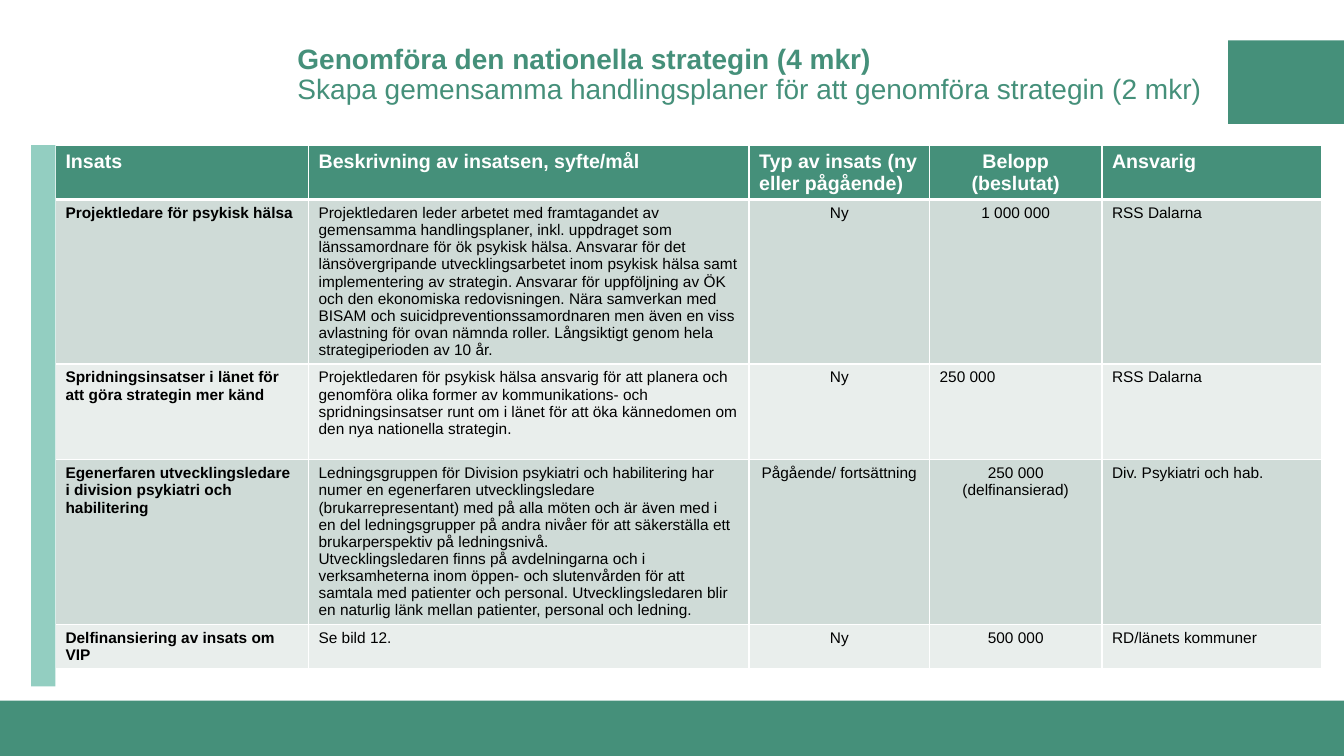
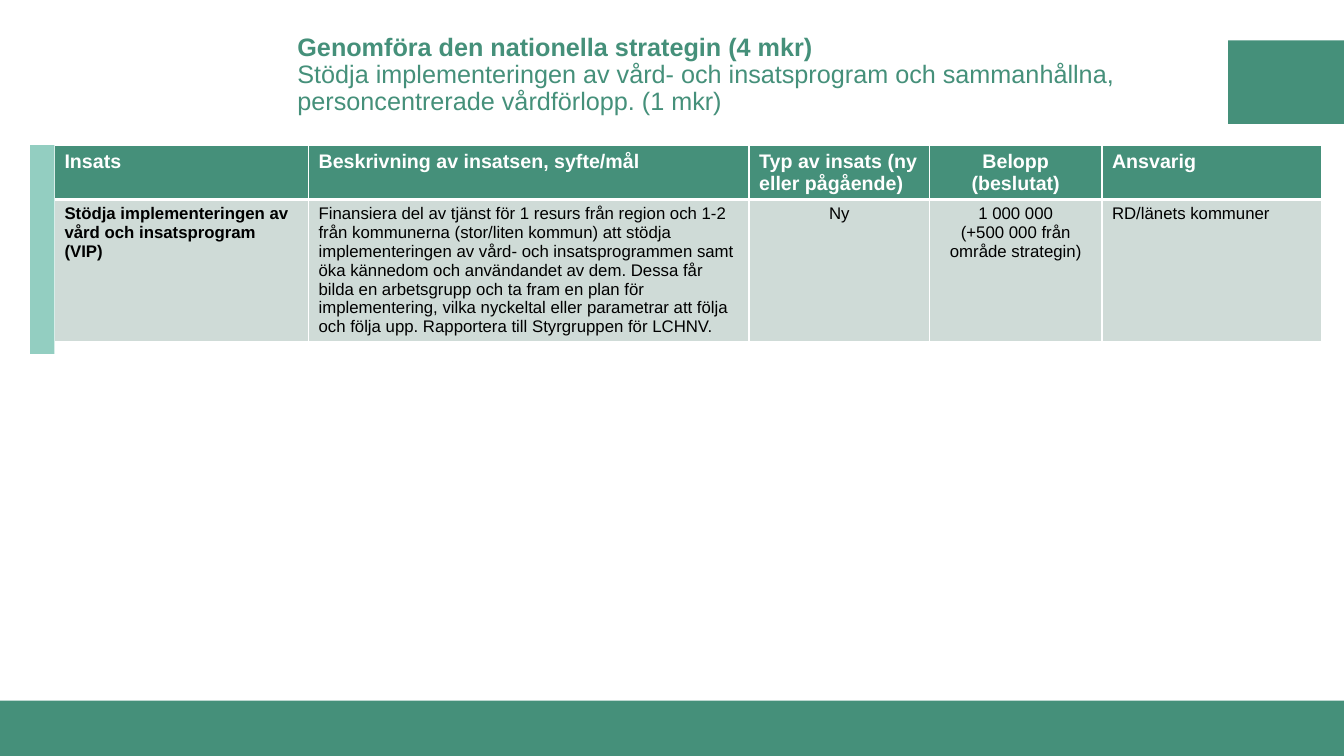
from lxml.etree import SubElement
from pptx import Presentation
from pptx.dml.color import RGBColor
from pptx.enum.shapes import MSO_SHAPE
from pptx.enum.text import MSO_ANCHOR, MSO_AUTO_SIZE, PP_ALIGN
from pptx.oxml.ns import qn
from pptx.util import Inches, Pt

GREEN = RGBColor(0x45, 0x90, 0x7A)
MINT = RGBColor(0x93, 0xCE, 0xC1)
ROW_DARK = RGBColor(0xCF, 0xDB, 0xD7)
ROW_LIGHT = RGBColor(0xE9, 0xEE, 0xEC)
WHITE = RGBColor(0xFF, 0xFF, 0xFF)
BLACK = RGBColor(0, 0, 0)
FONT = "Arial"

TABLE_TOP = 1.44
HEADER_HEIGHT = 0.54
SECOND_COLUMN = 3.06  # left edge, the same on every page
OTHER_WIDTHS = [4.37, 1.79, 1.71, 2.18]
BAR_WIDTH = 0.24
CENTERED_COLUMNS = (2, 3)
HEADERS = ["Insats", "Beskrivning av insatsen, syfte/mål",
           "Typ av insats (ny eller pågående)", "Belopp (beslutat)", "Ansvarig"]

STRATEGY_ROWS = [
    ["Projektledare för psykisk hälsa",
     "Projektledaren leder arbetet med framtagandet av gemensamma handlingsplaner, "
     "inkl. uppdraget som länssamordnare för ök psykisk hälsa. Ansvarar för det "
     "länsövergripande utvecklingsarbetet inom psykisk hälsa samt implementering av "
     "strategin. Ansvarar för uppföljning av ÖK och den ekonomiska redovisningen. "
     "Nära samverkan med BISAM och suicidpreventionssamordnaren men även en viss "
     "avlastning för ovan nämnda roller. Långsiktigt genom hela strategiperioden av 10 år.",
     "Ny", "1 000 000", "RSS Dalarna"],
    ["Spridningsinsatser i länet för att göra strategin mer känd",
     "Projektledaren för psykisk hälsa ansvarig för att planera och genomföra olika "
     "former av kommunikations- och spridningsinsatser runt om i länet för att öka "
     "kännedomen om den nya nationella strategin.",
     "Ny", "250 000", "RSS Dalarna"],
    ["Egenerfaren utvecklingsledare i division psykiatri och habilitering",
     "Ledningsgruppen för Division psykiatri och habilitering har numer en egenerfaren "
     "utvecklingsledare (brukarrepresentant) med på alla möten och är även med i en del "
     "ledningsgrupper på andra nivåer för att säkerställa ett brukarperspektiv på "
     "ledningsnivå.\n"
     "Utvecklingsledaren finns på avdelningarna och i verksamheterna inom öppen- och "
     "slutenvården för att samtala med patienter och personal. Utvecklingsledaren blir "
     "en naturlig länk mellan patienter, personal och ledning.",
     "Pågående/ fortsättning", "250 000 (delfinansierad)", "Div. Psykiatri och hab."],
    ["Delfinansiering av insats om VIP", "Se bild 12.",
     "Ny", "500 000", "RD/länets kommuner"],
]

PROGRAM_ROWS = [
    ["Stödja implementeringen av vård och insatsprogram (VIP)",
     "Finansiera del av tjänst för 1 resurs från region och 1-2 från kommunerna "
     "(stor/liten kommun) att stödja implementeringen av vård- och insatsprogrammen samt "
     "öka kännedom och användandet av dem. Dessa får bilda en arbetsgrupp och ta fram en "
     "plan för implementering, vilka nyckeltal eller parametrar att följa och följa upp. "
     "Rapportera till Styrgruppen för LCHNV.",
     "Ny", "1 000 000\n(+500 000 från område strategin)", "RD/länets kommuner"],
]


def add_span(para, text, size=11, color=BLACK, bold=False):
    span = para.add_run()
    span.text = text
    span.font.name = FONT
    span.font.size = Pt(size)
    span.font.bold = bold
    span.font.color.rgb = color


def set_borders(cell, top=1, bottom=1):
    properties = cell._tc.get_or_add_tcPr()
    for side, width in (("L", 1), ("R", 1), ("T", top), ("B", bottom)):
        line = SubElement(properties, qn(f"a:ln{side}"), w=str(Pt(width)))
        fill = SubElement(line, qn("a:solidFill"))
        SubElement(fill, qn("a:srgbClr"), val=str(WHITE))


class StrategyDeck:
    """Holds the shared style and the current page."""

    def __init__(self):
        self.deck = Presentation()
        self.deck.slide_width = Inches(13.33)
        self.deck.slide_height = Inches(7.5)
        self.layout = self.deck.slide_layouts[5]
        self.page = None

    def add_page(self, subtitle, size):
        first = self.page is None
        self.page = self.deck.slides.add_slide(self.layout)
        if first:
            self.add_shared_bands()
        self.add_title(subtitle, size)

    def add_shared_bands(self):
        # Corner block and bottom band live on the layout
        for area in ((12.18, 0.4, 1.15, 0.83), (0, 6.95, 13.33, 0.55)):
            band = self.add_block(*area, GREEN)
            self.layout.shapes.element.append(band.element)

    def add_block(self, left, top, width, height, color):
        block = self.page.shapes.add_shape(
            MSO_SHAPE.RECTANGLE, Inches(left), Inches(top), Inches(width), Inches(height))
        block.shadow.inherit = False
        block.fill.solid()
        block.fill.fore_color.rgb = color
        block.line.fill.background()
        return block

    def add_title(self, subtitle, size):
        title = self.page.shapes.title
        title.left, title.top = Inches(2.85), Inches(0.38)
        title.width, title.height = Inches(9.2), Inches(0.74)
        frame = title.text_frame
        frame.word_wrap = True
        frame.auto_size = MSO_AUTO_SIZE.NONE
        frame.vertical_anchor = MSO_ANCHOR.MIDDLE
        para = frame.paragraphs[0]
        para.alignment = PP_ALIGN.LEFT
        para.line_spacing = 0.9
        add_span(para, "Genomföra den nationella strategin (4 mkr)", size, GREEN, bold=True)
        para.add_line_break()
        add_span(para, subtitle, size, GREEN)

    def add_table(self, rows, heights, left, bar_height, size):
        heights = [HEADER_HEIGHT, *heights]
        widths = [SECOND_COLUMN - left, *OTHER_WIDTHS]
        table = self.page.shapes.add_table(
            len(heights), len(widths), Inches(left), Inches(TABLE_TOP),
            Inches(sum(widths)), Inches(sum(heights))).table
        table.horz_banding = False
        for column, width in zip(table.columns, widths):
            column.width = Inches(width)
        for row, height in zip(table.rows, heights):
            row.height = Inches(height)
        for row_index, texts in enumerate([HEADERS, *rows]):
            for column_index, text in enumerate(texts):
                self.fill_cell(table.cell(row_index, column_index), text,
                               row_index, column_index, size)
        # Accent bar along the left edge
        self.add_block(left - BAR_WIDTH, TABLE_TOP, BAR_WIDTH, bar_height, MINT)
        return table

    def fill_cell(self, cell, text, row_index, column_index, size):
        header = row_index == 0
        set_borders(cell, top=3 if row_index == 1 else 1, bottom=3 if header else 1)
        cell.fill.solid()
        cell.fill.fore_color.rgb = (
            GREEN if header else ROW_DARK if row_index % 2 else ROW_LIGHT)
        centered = column_index == 3 or (column_index in CENTERED_COLUMNS and not header)
        for index, line in enumerate(text.split("\n")):
            frame = cell.text_frame
            para = frame.add_paragraph() if index else frame.paragraphs[0]
            para.alignment = PP_ALIGN.CENTER if centered else PP_ALIGN.LEFT
            add_span(para, line, size=14 if header else size,
                     color=WHITE if header else BLACK, bold=header or column_index == 0)


def main():
    builder = StrategyDeck()

    # Joint action plans
    builder.add_page("Skapa gemensamma handlingsplaner för att genomföra strategin (2 mkr)", 20)
    table = builder.add_table(STRATEGY_ROWS, [1.63, 0.95, 1.63, 0.43],
                              left=0.55, bar_height=5.37, size=11)
    table.cell(2, 3).text_frame.paragraphs[0].alignment = PP_ALIGN.LEFT

    # Care programmes
    builder.add_page("Stödja implementeringen av vård- och insatsprogram och sammanhållna, "
                     "personcentrerade vårdförlopp. (1 mkr)", 18)
    builder.add_table(PROGRAM_ROWS, [1.4], left=0.54, bar_height=2.07, size=12)

    builder.deck.save("out.pptx")


if __name__ == "__main__":
    main()
